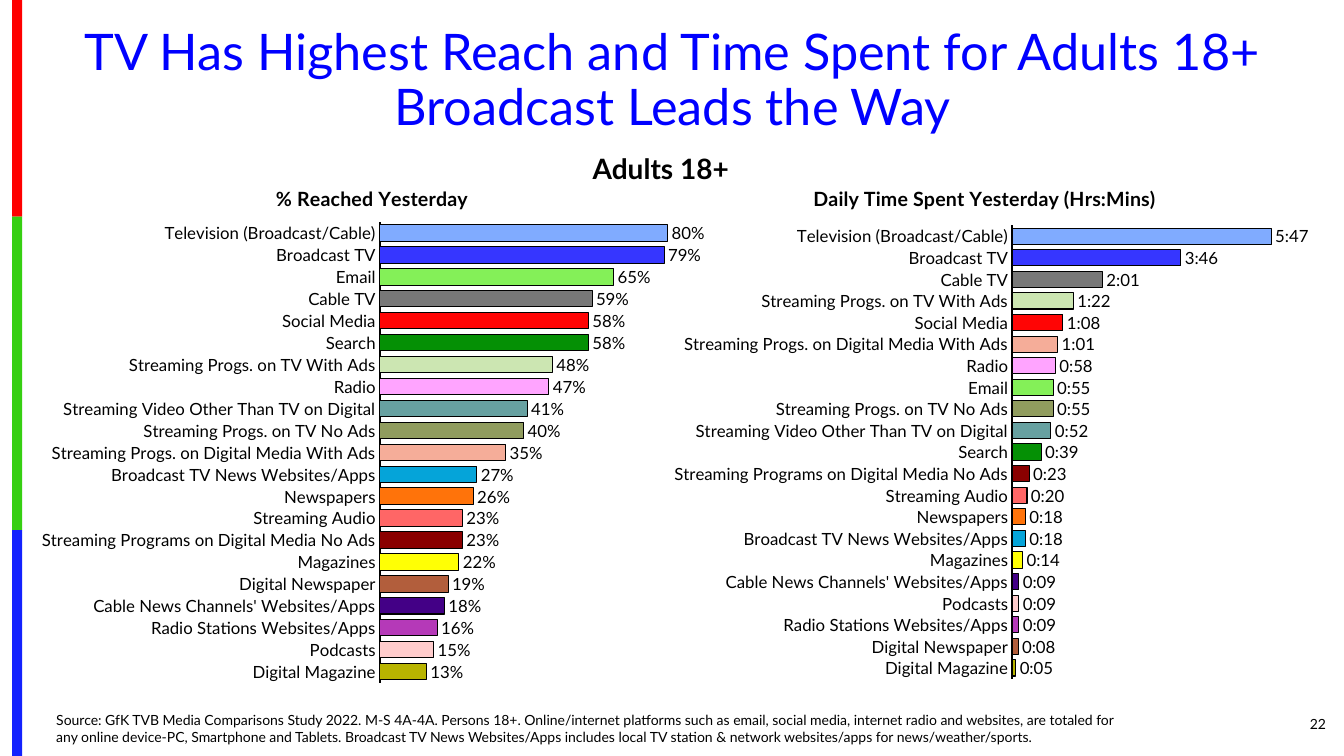
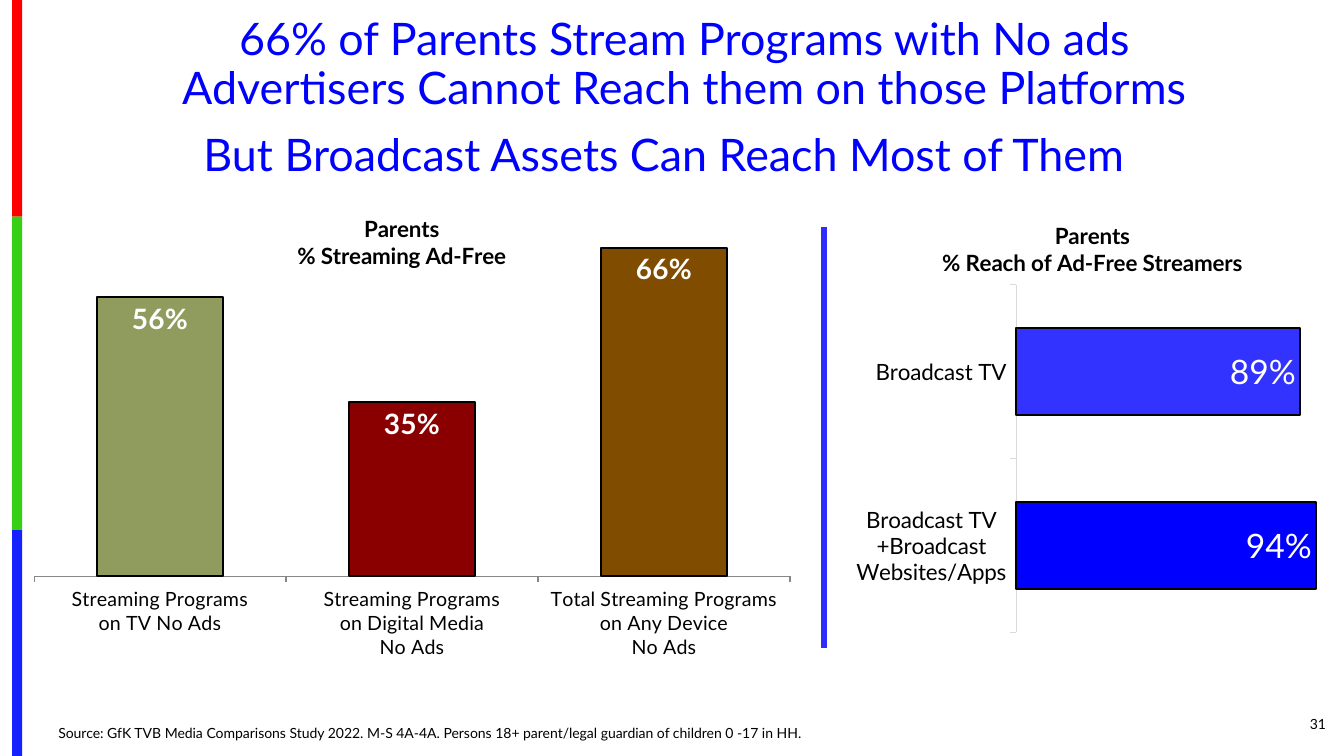
"""Build two slides on media reach, time spent and ad-free streaming."""
from dataclasses import dataclass
from math import ceil

from pptx import Presentation
from pptx.chart.data import CategoryChartData
from pptx.dml.color import RGBColor
from pptx.enum.chart import XL_CHART_TYPE, XL_LABEL_POSITION, XL_TICK_MARK
from pptx.enum.shapes import MSO_CONNECTOR, MSO_SHAPE
from pptx.enum.text import MSO_ANCHOR, MSO_AUTO_SIZE, PP_ALIGN
from pptx.oxml import parse_xml
from pptx.oxml.ns import nsdecls, qn
from pptx.slide import Slide, SlideLayout
from pptx.util import Inches, Pt

BAR, COLUMN = XL_CHART_TYPE.BAR_CLUSTERED, XL_CHART_TYPE.COLUMN_CLUSTERED
OUT_END, IN_END = XL_LABEL_POSITION.OUTSIDE_END, XL_LABEL_POSITION.INSIDE_END
TICK_NONE, TICK_OUT = XL_TICK_MARK.NONE, XL_TICK_MARK.OUTSIDE
RECT, STRAIGHT = MSO_SHAPE.RECTANGLE, MSO_CONNECTOR.STRAIGHT
TOP, MIDDLE, BOTTOM = MSO_ANCHOR.TOP, MSO_ANCHOR.MIDDLE, MSO_ANCHOR.BOTTOM
LEFT, CENTER, RIGHT = PP_ALIGN.LEFT, PP_ALIGN.CENTER, PP_ALIGN.RIGHT
NO_FIT = MSO_AUTO_SIZE.NONE

FONT = "Lato"
BLACK = RGBColor(0x00, 0x00, 0x00)
WHITE = RGBColor(0xFF, 0xFF, 0xFF)
BLUE = RGBColor(0x00, 0x00, 0xFF)
RULE = RGBColor(0x2D, 0x2D, 0xFE)
ROYAL = RGBColor(0x33, 0x33, 0xFF)
GREY = RGBColor(0x87, 0x87, 0x87)
PALE = RGBColor(0xD9, 0xD9, 0xD9)
OLIVE = RGBColor(0x90, 0x9C, 0x5E)
MAROON = RGBColor(0x8A, 0x00, 0x00)
BROWN = RGBColor(0x80, 0x4C, 0x00)
BAND_RED = RGBColor(0xFE, 0x00, 0x00)
BAND_GREEN = RGBColor(0x36, 0xCF, 0x12)
BAND_BLUE = RGBColor(0x13, 0x22, 0xFE)

BANDS = ((BAND_RED, 2.15), (BAND_GREEN, 3.11), (BAND_BLUE, 2.24))
DAY = 24 * 60
Box = tuple[float, float, float, float]


@dataclass(frozen=True)
class Medium:
    """A medium with its colour, percent reach and daily minutes."""
    name: str
    color: RGBColor
    reach: int
    mins: int


@dataclass(frozen=True)
class Bar:
    """One bar of a chart."""
    label: str
    value: float
    color: RGBColor


@dataclass(frozen=True)
class Graph:
    """A bar or column chart with its layout and style."""
    box: Box
    title: str
    spot: tuple[float, float]
    plot: Box
    bars: list[Bar]
    top: float
    kind: XL_CHART_TYPE = BAR
    gap: int = 100
    size: int = 12
    head: int = 16
    line: float = 1.5
    tick: XL_TICK_MARK = TICK_OUT
    axis: RGBColor = PALE
    width: float = 0.75
    form: str = "0%"
    place: XL_LABEL_POSITION = IN_END
    mark: int = 12
    ink: RGBColor = WHITE
    bold: bool = False


MEDIA = [
    Medium("Television (Broadcast/Cable)", RGBColor(0x80, 0xAB, 0xFF), 80, 347),
    Medium("Broadcast TV", RGBColor(0x36, 0x36, 0xFF), 79, 226),
    Medium("Email", RGBColor(0x84, 0xF0, 0x58), 65, 55),
    Medium("Cable TV", RGBColor(0x78, 0x78, 0x78), 59, 121),
    Medium("Social Media", RGBColor(0xFF, 0x05, 0x05), 58, 68),
    Medium("Search", RGBColor(0x05, 0x90, 0x05), 58, 39),
    Medium("Streaming Progs. on TV With Ads", RGBColor(0xCC, 0xE6, 0xB2), 48, 82),
    Medium("Radio", RGBColor(0xFF, 0xA4, 0xFF), 47, 58),
    Medium("Streaming Video Other Than TV on Digital", RGBColor(0x67, 0xA1, 0xA1), 41, 52),
    Medium("Streaming Progs. on TV No Ads", OLIVE, 40, 55),
    Medium("Streaming Progs. on Digital Media With Ads", RGBColor(0xF5, 0xAD, 0x99), 35, 61),
    Medium("Newspapers", RGBColor(0xFF, 0x73, 0x0A), 26, 18),
    Medium("Broadcast TV News Websites/Apps", RGBColor(0x05, 0xA4, 0xD9), 27, 18),
    Medium("Streaming Audio", RGBColor(0xFF, 0x66, 0x66), 23, 20),
    Medium("Streaming Programs on Digital Media No Ads", MAROON, 23, 23),
    Medium("Magazines", RGBColor(0xFF, 0xFF, 0x05), 22, 14),
    Medium("Digital Newspaper", RGBColor(0xB2, 0x5E, 0x3C), 19, 8),
    Medium("Cable News Channels' Websites/Apps", RGBColor(0x43, 0x00, 0x86), 18, 9),
    Medium("Podcasts", RGBColor(0xFF, 0xCC, 0xCC), 15, 9),
    Medium("Radio Stations Websites/Apps", RGBColor(0xB5, 0x39, 0xB8), 16, 9),
    Medium("Digital Magazine", RGBColor(0xB8, 0xB4, 0x00), 13, 5),
]


def day_part(mins: int) -> float:
    """Return minutes as a part of a day, rounded up to four digits."""
    return ceil(mins * 10000 / DAY) / 10000


def ranked(bars: list[Bar]) -> list[Bar]:
    """Return the bars from longest to shortest, ties in given order."""
    return sorted(bars, key=lambda bar: -bar.value)


def add_text(slide: Slide, box: Box, text: str, size: int, color: RGBColor = BLACK,
             align: PP_ALIGN = LEFT, anchor: MSO_ANCHOR = TOP,
             bold: bool = False, wrap: bool = True) -> None:
    """Add a text box holding one paragraph."""
    frame = slide.shapes.add_textbox(*map(Inches, box)).text_frame
    frame.word_wrap, frame.vertical_anchor = wrap, anchor
    para = frame.paragraphs[0]
    para.text, para.alignment = text, align
    font = para.font
    font.name, font.size, font.bold = FONT, Pt(size), bold
    font.color.rgb = color


def set_title(slide: Slide, box: Box, text: str, size: int) -> None:
    """Move, fill and format the title placeholder."""
    title = slide.shapes.title
    title.left, title.top, title.width, title.height = map(Inches, box)
    frame = title.text_frame
    frame.word_wrap, frame.auto_size, frame.vertical_anchor = True, NO_FIT, TOP
    para = frame.paragraphs[0]
    para.text, para.alignment, para.line_spacing = text, CENTER, 0.9
    para.font.name, para.font.size = FONT, Pt(size)
    para.font.color.rgb = BLUE


def add_foot(slide: Slide, box: Box, source: str, page: int) -> None:
    """Add the source line and the page number."""
    add_text(slide, box, source, 10, anchor=BOTTOM)
    add_text(slide, (12.17, 6.98, 1.08, 0.4), str(page), 10, align=RIGHT, anchor=MIDDLE)


def set_bands(slide: Slide, layout: SlideLayout) -> None:
    """Stack the side bands on the layout, without its unused placeholders."""
    tree = layout.shapes.element
    for holder in list(layout.placeholders):
        if holder.placeholder_format.idx:
            tree.remove(holder.element)
    top = 0.0
    for color, height in BANDS:
        band = slide.shapes.add_shape(RECT, Inches(0.12), Inches(top), Inches(0.1), Inches(height))
        band.shadow.inherit = False
        band.fill.solid()
        band.fill.fore_color.rgb = color
        band.line.fill.background()
        tree.append(band.element)
        top += height


def set_layout(part, index: int, inner: bool, **spots: float) -> None:
    """Give a chart part a manual layout in fractions of the chart."""
    for old in part.findall(qn("c:layout")):
        part.remove(old)
    target = '<c:layoutTarget val="inner"/>' if inner else ""
    modes = "".join(f'<c:{key}Mode val="edge"/>' for key in "xy")
    sizes = "".join(f'<c:{key} val="{val}"/>' for key, val in spots.items())
    part.insert(index, parse_xml(
        f'<c:layout {nsdecls("c")}><c:manualLayout>{target}{modes}{sizes}'
        '</c:manualLayout></c:layout>'))


def add_graph(slide: Slide, graph: Graph) -> None:
    """Draw a chart with coloured bars and value labels."""
    data = CategoryChartData()
    data.categories = [bar.label for bar in graph.bars]
    data.add_series("Series 1", [bar.value for bar in graph.bars])
    chart = slide.shapes.add_chart(graph.kind, *map(Inches, graph.box), data).chart
    chart.has_legend = False
    chart.font.name, chart.font.size = FONT, Pt(graph.size)
    chart.font.color.rgb = BLACK

    frame = chart.chart_title.text_frame
    frame.text = graph.title
    for para in frame.paragraphs:
        font = para.font
        font.name, font.size, font.bold = FONT, Pt(graph.head), True
        font.color.rgb = BLACK

    root = chart.element.find(qn("c:chart"))
    x, y = graph.spot
    set_layout(root.find(qn("c:title")), 1, False, x=x, y=y)
    x, y, w, h = graph.plot
    set_layout(root.find(qn("c:plotArea")), 0, True, x=x, y=y, w=w, h=h)
    root.addnext(parse_xml(
        f'<c:spPr {nsdecls("c", "a")}><a:noFill/><a:ln><a:noFill/></a:ln></c:spPr>'))

    scale, axis = chart.value_axis, chart.category_axis
    scale.has_major_gridlines = scale.visible = False
    scale.minimum_scale, scale.maximum_scale = 0, graph.top
    axis.reverse_order = graph.kind == BAR
    axis.major_tick_mark = graph.tick
    axis.format.line.color.rgb = graph.axis
    axis.format.line.width = Pt(graph.width)

    plot = chart.plots[0]
    plot.gap_width, plot.vary_by_categories = graph.gap, False
    series = plot.series[0]
    for index, bar in enumerate(graph.bars):
        look = series.points[index].format
        look.fill.solid()
        look.fill.fore_color.rgb = bar.color
        look.line.color.rgb = BLACK
        look.line.width = Pt(graph.line)

    plot.has_data_labels = True
    labels = plot.data_labels
    labels.show_value, labels.position = True, graph.place
    labels.number_format, labels.number_format_is_linked = graph.form, False
    font = labels.font
    font.name, font.size, font.bold = FONT, Pt(graph.mark), graph.bold
    font.color.rgb = graph.ink


def fill_adults(slide: Slide) -> None:
    """Fill the slide on reach and time spent by adults."""
    set_title(slide, (0.46, 0.22, 12.42, 1.19),
              "TV Has Highest Reach and Time Spent for Adults 18+\vBroadcast Leads the Way", 36)
    add_foot(slide, (0.46, 7, 10.76, 0.44),
             "Source: GfK TVB Media Comparisons Study 2022. M-S 4A-4A. Persons 18+. "
             "Online/internet platforms such as email, social media, internet radio and "
             "websites, are totaled for any online device-PC, Smartphone and Tablets. "
             "Broadcast TV News Websites/Apps includes local TV station & network "
             "websites/apps for news/weather/sports.", 22)
    style = dict(gap=34, head=14, line=0.75, tick=TICK_NONE, axis=BLACK, width=1.5,
                 place=OUT_END, ink=BLACK)
    add_graph(slide, Graph(
        (6.4, 1.45, 7.19, 5.46), "Daily Time Spent Yesterday (Hrs:Mins)", (0.227, 0.063),
        (0.506, 0.144, 0.445, 0.824),
        ranked([Bar(item.name, day_part(item.mins), item.color) for item in MEDIA]),
        0.3, form="h:mm;@", **style))
    add_graph(slide, Graph(
        (0.25, 1.45, 7.19, 5.46), "% Reached Yesterday", (0.341, 0.063),
        (0.489, 0.138, 0.447, 0.837),
        ranked([Bar(item.name, item.reach / 100, item.color) for item in MEDIA]),
        0.9, **style))
    add_text(slide, (5.78, 1.45, 1.76, 0.44), "Adults 18+", 20, bold=True, wrap=False)


def fill_parents(slide: Slide) -> None:
    """Fill the slide on parents who stream without ads."""
    set_title(slide, (0.58, 0.12, 12.42, 1.56),
              "66% of Parents Stream Programs with No ads\v"
              "Advertisers Cannot Reach them on those Platforms", 32)
    add_foot(slide, (0.48, 7.13, 9.77, 0.27),
             "Source: GfK TVB Media Comparisons Study 2022. M-S 4A-4A. "
             "Persons 18+ parent/legal guardian of children 0 -17 in HH.", 31)
    add_graph(slide, Graph(
        (0.33, 2.01, 7.66, 5.08), "Parents\n% Streaming Ad-Free", (0.338, 0.016),
        (0.001, 0.049, 0.979, 0.681),
        [Bar("Streaming Programs\non TV No Ads", 0.56, OLIVE),
         Bar("Streaming Programs\non Digital Media\nNo Ads", 0.35, MAROON),
         Bar("Total Streaming Programs\non Any Device\nNo Ads", 0.66, BROWN)],
        0.7, COLUMN, size=14, axis=GREY, mark=20, bold=True))
    add_text(slide, (1.92, 1.21, 9.56, 0.64),
             "But Broadcast Assets Can Reach Most of Them", 32, BLUE, wrap=False)
    add_graph(slide, Graph(
        (8.34, 2.01, 5, 4.42), "Parents\n% Reach of Ad-Free Streamers", (0.195, 0.034),
        (0.348, 0.184, 0.632, 0.781),
        [Bar("Broadcast TV", 0.89, ROYAL),
         Bar("Broadcast TV +Broadcast Websites/Apps", 0.94, BLUE)],
        1, size=16, mark=24))
    rule = slide.shapes.add_connector(
        STRAIGHT, Inches(8.17), Inches(2.25), Inches(8.17), Inches(6.43))
    rule.line.color.rgb, rule.line.width = RULE, Pt(4)
    rule.element.spPr.append(parse_xml(f'<a:effectLst {nsdecls("a")}/>'))


def main() -> None:
    """Build and save the slides."""
    deck = Presentation()
    deck.slide_width, deck.slide_height = Inches(13.33), Inches(7.5)
    layout = deck.slide_layouts[5]
    adults, parents = (deck.slides.add_slide(layout) for _ in range(2))
    set_bands(adults, layout)
    fill_adults(adults)
    fill_parents(parents)
    deck.save("out.pptx")


if __name__ == "__main__":
    main()
